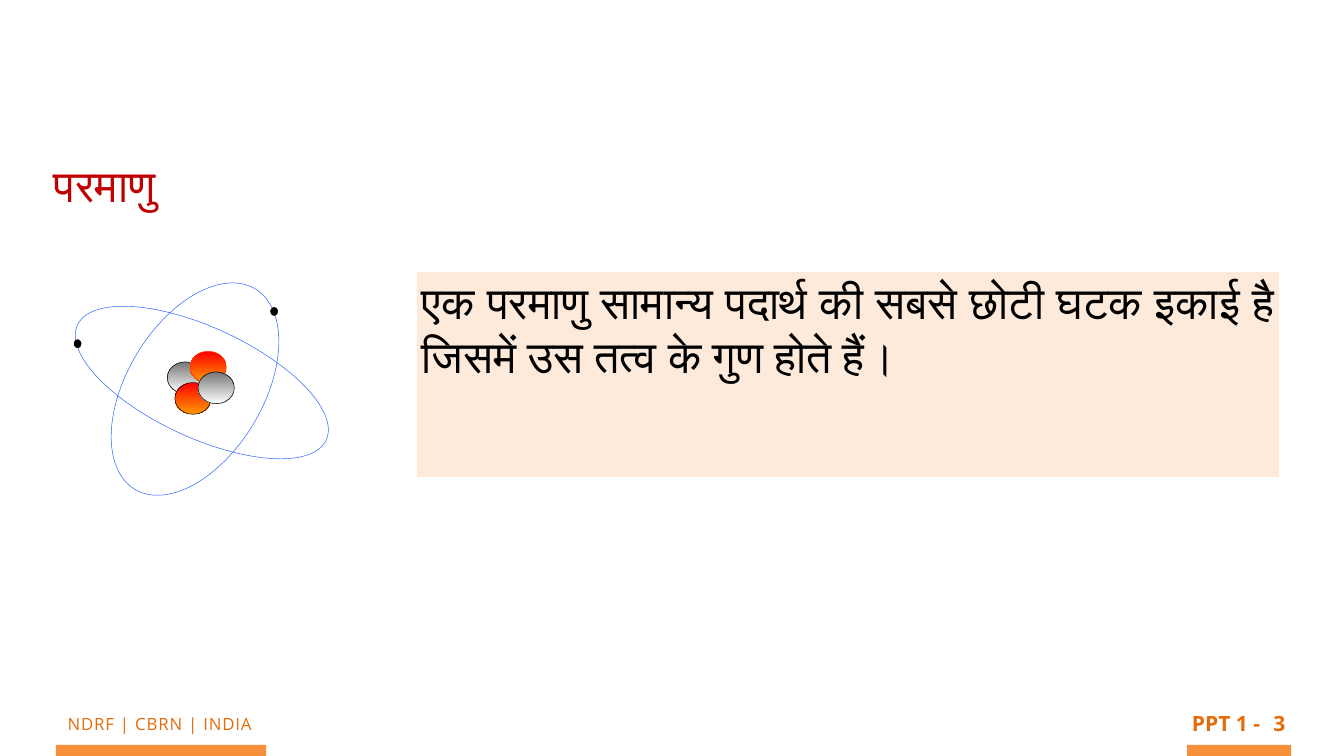
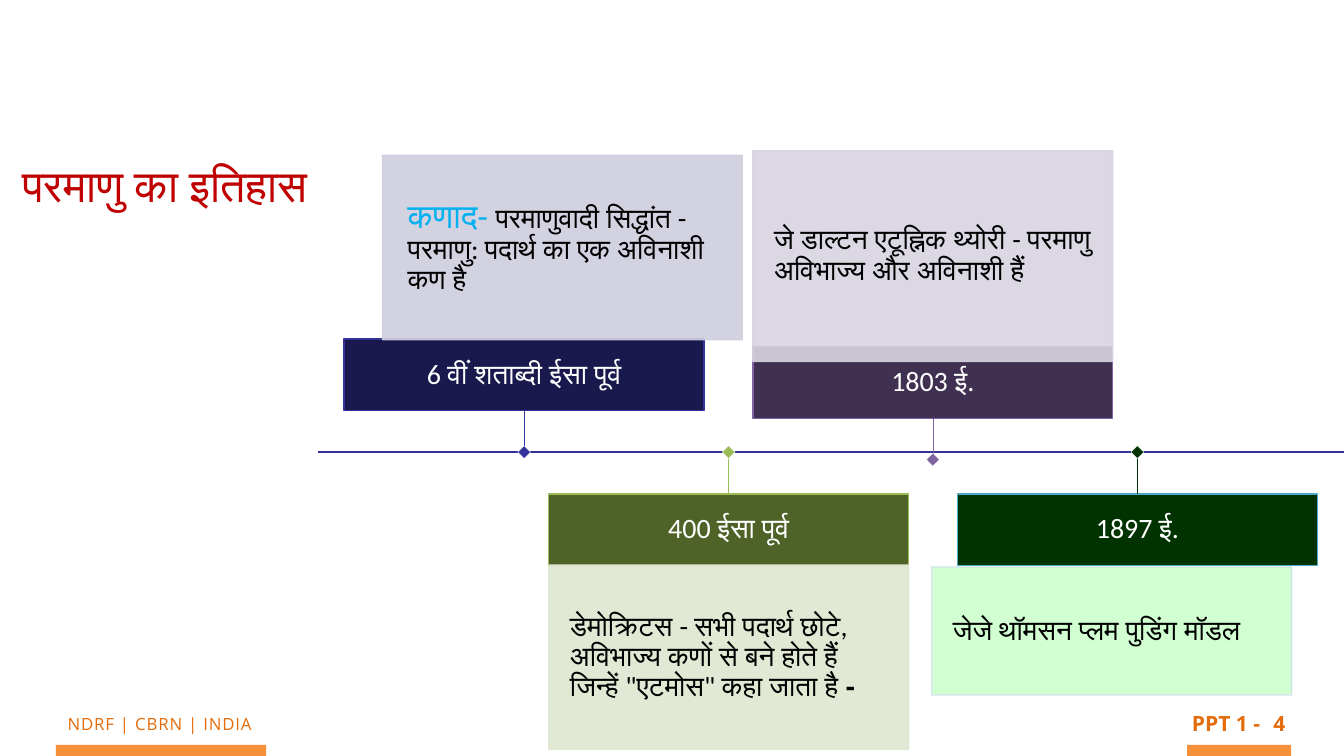
from lxml import etree
from pptx import Presentation, util as u
from pptx.dml.color import RGBColor
from pptx.enum import shapes as sh, text as tx
from pptx.oxml.ns import qn

PX = 9144  # 100 px to the inch
SANS, CALIBRI = "Open Sans", "Calibri"
RED, ORANGE, BAND, BLACK, WHITE = "C00000", "E46C0A", "F7903B", "000000", "FFFFFF"
NAVY, ORBIT = "333399", "3366FF"
RECT, OVAL = sh.MSO_SHAPE.RECTANGLE, sh.MSO_SHAPE.OVAL
LEFT, CENTER, JUSTIFY = tx.PP_ALIGN.LEFT, tx.PP_ALIGN.CENTER, tx.PP_ALIGN.JUSTIFY
TOP, MIDDLE = tx.MSO_ANCHOR.TOP, tx.MSO_ANCHOR.MIDDLE

# Shared content
HEADING = {"size": 64, "name": SANS, "color": RED}
NUMBER = {"size": 30, "name": SANS, "color": ORANGE, "bold": True}
FOOTER = [  # text, box, format, wrap
    ("NDRF | CBRN | INDIA", (63, 1408, 508, 58),
     {"size": 24, "name": SANS, "color": ORANGE, "spc": 120}, True),
    ("PPT 1 -", (2356, 1401, 154, 68), NUMBER, False),
]
NUMBER_BOX = (2489, 1401, 99, 55)
BANDS = [(111, 417), (2356, 206)]  # left, width

# Slide 1: the atom
ATOM_TITLE = "परमाणु"
DEFINITION = "एक परमाणु सामान्य पदार्थ की सबसे छोटी घटक इकाई है जिसमें उस तत्व के गुण होते हैं।"
ORBITS = [((291, 487, 219, 544), 294.8), ((252, 540, 270, 464), 31)]
ELECTRONS = [(147, 674), (537, 610)]
GREY, FIRE = ("767676", "FFFFFF"), ("FF0000", "FF9900")
NUCLEUS = [(332, 718, GREY, BLACK), (347, 759, FIRE, BLACK),
           (377, 697, FIRE, "FF3300"), (393, 738, GREY, BLACK)]

# Slide 2: the timeline
HISTORY_TITLE = "परमाणु का इतिहास"
AXIS, AXIS_START, AXIS_END = 897, 631, 2667
FIRST_LABEL, LABEL_STEP, LABEL_W, LABEL_H = 683, 1217 / 3, 714, 142
UPPER_LABEL, LOWER_LABEL = 673, 980
MARKER = 18
CARD_TEXT = {"size": 40, "name": CALIBRI, "color": BLACK}
LABEL_TEXT = {**CARD_TEXT, "color": WHITE}
EVENTS = [
    {"date": "6 वीं शताब्दी ईसा पूर्व", "upper": True, "shift": 0,
     "fill": "19194D", "edge": NAVY, "accent": NAVY,
     "card": (759, 308, 366), "tint": "CECEDE", "rim": "CECEDE", "inset": 50,
     "runs": [("कणाद- ", {"size": 48, "color": "00B0F0"}),
              ("परमाणुवादी सिद्धांत - परमाणु: पदार्थ का एक अविनाशी कण है", {})]},
    {"date": "400 ईसा पूर्व", "upper": False, "shift": 0,
     "fill": "4F6228", "edge": "9BBB59", "accent": "9BBB59",
     "card": (1089, 1121, 366), "tint": "DEE7D1", "rim": "DEE7D1", "inset": 42,
     "runs": [('डेमोक्रिटस - सभी पदार्थ छोटे, अविभाज्य कणों से बने होते हैं '
               'जिन्हें "एटमोस" कहा जाता है', {}),
              (" -", {"name": SANS, "bold": True})]},
    {"date": "1803 ई.", "upper": True, "shift": 15,
     "fill": "403152", "edge": "8064A2", "accent": "8064A2",
     "card": (1494, 299, 418), "tint": "D8D3E0", "rim": "D8D3E0", "inset": 42,
     "runs": [("जे डाल्टन एटूह्निक थ्योरी - परमाणु अविभाज्य और अविनाशी हैं", {})]},
    {"date": "1897 ई.", "upper": False, "shift": 0,
     "fill": "003300", "edge": "4BACC6", "accent": "003300",
     "card": (1849, 1125, 254), "tint": "CCFFCC", "rim": "D0E3EA", "inset": 42,
     "runs": [("जेजे थॉमसन प्लम पुडिंग मॉडल", {})]},
]


# Helpers
def rgb(code):
    return RGBColor.from_string(code)


def emu(box):
    return [u.Emu(round(v * PX)) for v in box]


def write(s, runs, align=LEFT, anchor=TOP, inset=None, spacing=1.0, wrap=True):
    tf = s.text_frame
    frame = {"word_wrap": wrap, "vertical_anchor": anchor,
             "auto_size": tx.MSO_AUTO_SIZE.NONE}
    if inset is not None:
        frame |= {f"margin_{side}": u.Emu(inset * PX)
                  for side in ("left", "top", "right", "bottom")}
    for key, value in frame.items():
        setattr(tf, key, value)
    p = tf.paragraphs[0]
    for key, value in {"alignment": align, "line_spacing": spacing,
                       "space_before": u.Pt(0)}.items():
        setattr(p, key, value)
    for words, style in runs:
        r = p.add_run()
        r.text = words
        for key, value in style.items():
            if key == "color":
                r.font.color.rgb = rgb(value)
            elif key == "spc":
                r.font._element.set("spc", str(value))
            else:
                setattr(r.font, key, u.Pt(value) if key == "size" else value)
    return p


def add_shape(shapes, kind, box, fill=None, line=None, width=0.75, rotation=0):
    s = shapes.add_shape(kind, *emu(box))
    s.shadow.inherit = False
    s.rotation = rotation
    if fill is None:
        s.fill.background()
    elif isinstance(fill, tuple):
        s.fill.gradient()
        s.fill.gradient_angle = 270
        for stop, code in zip(s.fill.gradient_stops, fill):
            stop.color.rgb = rgb(code)
    else:
        s.fill.solid()
        s.fill.fore_color.rgb = rgb(fill)
    if line:
        s.line.color.rgb = rgb(line)
        s.line.width = u.Pt(width)
    else:
        s.line.fill.background()
    return s


def add_line(shapes, x1, y1, x2, y2, color, width):
    s = shapes.add_connector(sh.MSO_CONNECTOR.STRAIGHT, *emu((x1, y1, x2, y2)))
    s.line.color.rgb = rgb(color)
    s.line.width = u.Pt(width)
    etree.SubElement(s.element.spPr, qn("a:effectLst"))


def set_opacity(s, percent):
    for color in s.element.spPr.iter(qn("a:srgbClr")):
        etree.SubElement(color, qn("a:alpha")).set("val", str(percent * 1000))


def place(s, box):
    s.left, s.top, s.width, s.height = emu(box)


def add_slide(prs, layout, title, title_left, number):
    slide = prs.slides.add_slide(prs.slide_layouts[layout])
    for left, width in BANDS:
        add_shape(slide.shapes, RECT, (left, 1478, width, 22), BAND)
    for words, box, style, wrap in FOOTER + [(number, NUMBER_BOX, NUMBER, True)]:
        s = slide.shapes.add_textbox(*emu(box))
        write(s, [(words, style)], CENTER, inset=9, wrap=wrap)
    place(slide.shapes.title, (title_left, 308, 725, 261))
    write(slide.shapes.title, [(title, HEADING)])
    return slide


# Slide builders
def build_atom(prs):
    slide = add_slide(prs, 1, ATOM_TITLE, 97, "3")
    body = slide.placeholders[1]
    place(body, (827, 540, 1711, 406))
    body.fill.solid()
    body.fill.fore_color.rgb = rgb("FDEADA")
    p = write(body, [(DEFINITION, {**HEADING, "color": BLACK})], JUSTIFY)
    pPr = p._p.get_or_add_pPr()
    pPr.set("marL", "0")
    pPr.set("indent", "0")
    etree.SubElement(pPr, qn("a:buNone"))

    atom = slide.shapes.add_group_shape().shapes
    for box, angle in ORBITS:
        add_shape(atom, OVAL, box, line=ORBIT, rotation=angle)
    for x, y in ELECTRONS:
        add_shape(atom, OVAL, (x, y, 14, 16), BLACK, BLACK)
    for x, y, fill, edge in NUCLEUS:
        add_shape(atom, OVAL, (x, y, 72, 63), fill, edge)


def build_history(prs):
    slide = add_slide(prs, 5, HISTORY_TITLE, 34, "4")
    shapes = slide.shapes
    add_line(shapes, AXIS_START, AXIS, AXIS_END, AXIS, NAVY, 2)
    for i, event in enumerate(EVENTS):
        left = round(FIRST_LABEL + i * LABEL_STEP)
        top = (UPPER_LABEL if event["upper"] else LOWER_LABEL) + event["shift"]
        x, y = left + LABEL_W / 2, AXIS + event["shift"]

        # Date label and its card
        label = add_shape(shapes, RECT, (left, top, LABEL_W, LABEL_H),
                          event["fill"], event["edge"], 2)
        write(label, [(event["date"], LABEL_TEXT)], CENTER, MIDDLE, 22, 0.9)
        card_left, card_top, card_h = event["card"]
        card = add_shape(shapes, RECT, (card_left, card_top, LABEL_W, card_h),
                         event["tint"], event["rim"], 2)
        set_opacity(card, 90)
        runs = [(words, {**CARD_TEXT, **style}) for words, style in event["runs"]]
        write(card, runs, LEFT, MIDDLE, event["inset"], 0.9)

        # Stem and marker on the axis
        start, end = (top + LABEL_H, y) if event["upper"] else (y, top)
        add_line(shapes, x, start, x, end, event["accent"], 0.75)
        add_shape(shapes, RECT, (x - MARKER / 2, y - MARKER / 2, MARKER, MARKER),
                  event["accent"], WHITE, 0.5, 45)


def main():
    prs = Presentation()
    prs.slide_width, prs.slide_height = emu((2667, 1500))
    build_atom(prs)
    build_history(prs)
    prs.save("out.pptx")


if __name__ == "__main__":
    main()
